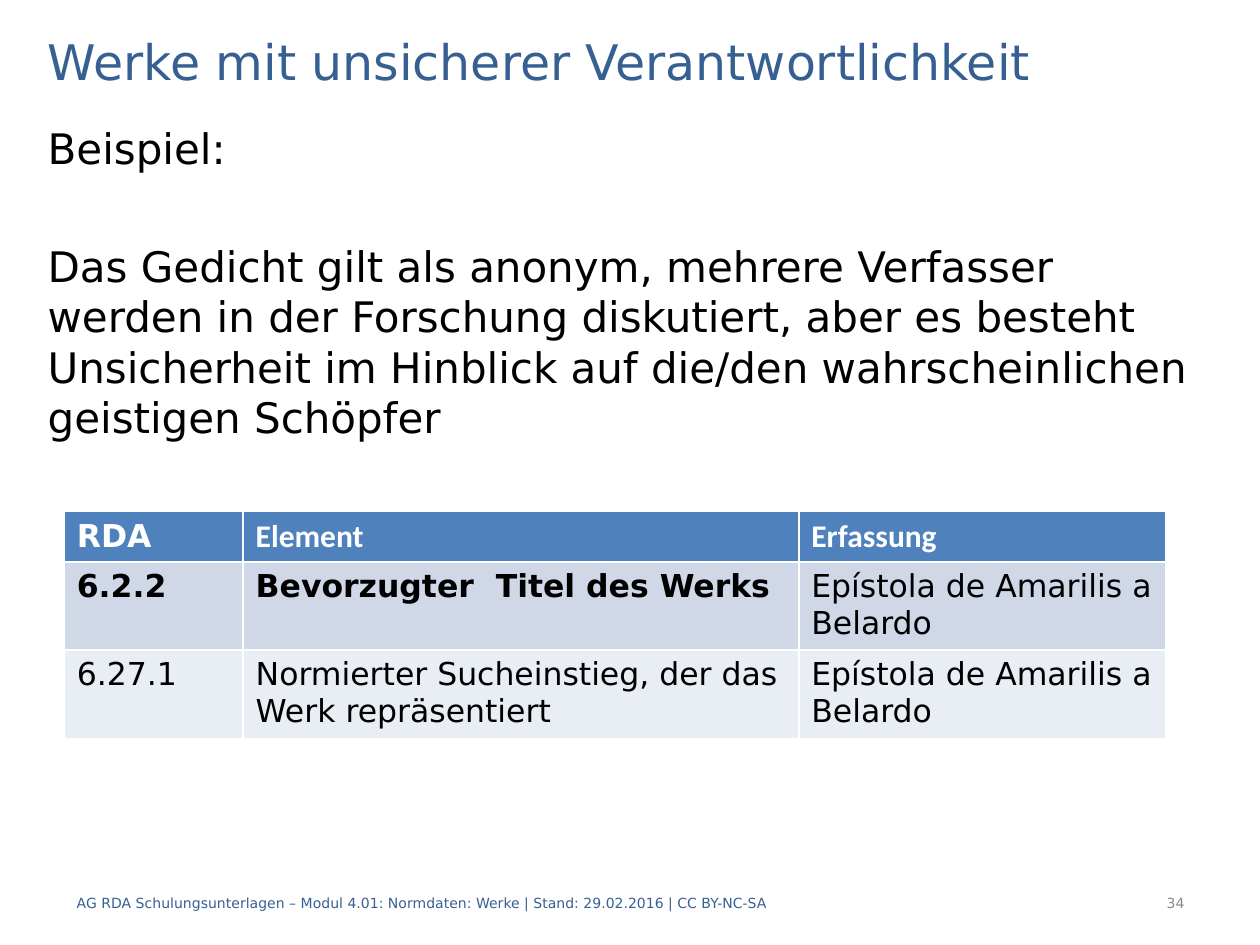
from dataclasses import dataclass

from pptx import Presentation
from pptx.dml.color import RGBColor as Rgb
from pptx.enum.text import MSO_ANCHOR as Anchor, PP_ALIGN as Align
from pptx.util import Inches, Pt


@dataclass(frozen=True)
class Theme:
    sans: str = "DejaVu Sans"
    header_sans: str = "Calibri"
    blue: str = "376092"
    black: str = "000000"
    white: str = "FFFFFF"
    grey: str = "898989"
    row_fills: tuple = ("4F81BD", "D0D8E8", "E9EDF4")
    title_size: int = 28
    body_size: int = 24
    table_size: int = 18
    footer_size: int = 8


THEME = Theme()
LEFT, WIDTH = 0.28, 9.45
INDENT = 0.51
FOOTER_TOP, FOOTER_HEIGHT = 6.97, 0.4
PARAGRAPH_GAP = 38.8
COLUMN_WIDTHS = (1.42, 4.41, 2.91)
ROW_HEIGHTS = (0.4, 0.7, 0.7)

TITLE = "Werke mit unsicherer Verantwortlichkeit"
BODY = (
    "Beispiel:",
    "Das Gedicht gilt als anonym, mehrere Verfasser werden in der Forschung "
    "diskutiert, aber es besteht Unsicherheit im Hinblick auf die/den "
    "wahrscheinlichen geistigen Schöpfer",
)
WORK_TITLE = "Epístola de Amarilis a Belardo"
ROWS = (
    ("RDA", "Element", "Erfassung"),
    ("6.2.2", "Bevorzugter  Titel des Werks", WORK_TITLE),
    ("6.27.1", "Normierter Sucheinstieg, der das Werk repräsentiert", WORK_TITLE),
)
FOOTER = ("AG RDA Schulungsunterlagen – Modul 4.01: Normdaten: Werke | "
          "Stand: 29.02.2016 | CC BY-NC-SA")
PAGE_NUMBER = "34"


def apply_format(target, values):
    for name, value in values.items():
        setattr(target, name, value)


def write(paragraph, text, size, color, family=THEME.sans, bold=False, align=Align.LEFT):
    paragraph.alignment = align
    run = paragraph.add_run()
    run.text = text
    apply_format(run.font, {"name": family, "size": Pt(size), "bold": bold})
    run.font.color.rgb = Rgb.from_string(color)


def add_title(slide):
    title = slide.shapes.title
    apply_format(title, {"left": Inches(LEFT), "top": Inches(0.2),
                         "width": Inches(WIDTH), "height": Inches(0.56)})
    apply_format(title.text_frame, {"vertical_anchor": Anchor.MIDDLE, "word_wrap": True})
    write(title.text_frame.paragraphs[0], TITLE, THEME.title_size, THEME.blue)


def add_text(slide, bounds, lines, size, color, anchor=Anchor.TOP, align=Align.LEFT):
    frame = slide.shapes.add_textbox(*map(Inches, bounds)).text_frame
    apply_format(frame, {"word_wrap": True, "vertical_anchor": anchor})
    for index, line in enumerate(lines):
        paragraph = frame.add_paragraph() if index else frame.paragraphs[0]
        paragraph.space_before = Pt(PARAGRAPH_GAP if index else 0)
        write(paragraph, line, size, color, align=align)


def add_rda_table(slide):
    table = slide.shapes.add_table(
        len(ROWS), len(COLUMN_WIDTHS), Inches(INDENT), Inches(4.06),
        Inches(sum(COLUMN_WIDTHS)), Inches(sum(ROW_HEIGHTS))).table
    for column, width in zip(table.columns, COLUMN_WIDTHS):
        column.width = Inches(width)
    for row_index, (row, height) in enumerate(zip(table.rows, ROW_HEIGHTS)):
        row.height = Inches(height)
        is_header = row_index == 0
        for column_index, cell in enumerate(row.cells):
            cell.fill.solid()
            cell.fill.fore_color.rgb = Rgb.from_string(THEME.row_fills[row_index])
            write(cell.text_frame.paragraphs[0], ROWS[row_index][column_index],
                  THEME.table_size,
                  THEME.white if is_header else THEME.black,
                  THEME.header_sans if is_header and column_index else THEME.sans,
                  is_header or (row_index == 1 and column_index < 2))


def main():
    deck = Presentation()
    apply_format(deck, {"slide_width": Inches(10), "slide_height": Inches(7.5)})
    slide = deck.slides.add_slide(deck.slide_layouts[5])
    add_title(slide)
    add_text(slide, (LEFT, 0.92, WIDTH, 5.98), BODY, THEME.body_size, THEME.black)
    add_text(slide, (INDENT, FOOTER_TOP, 6.69, FOOTER_HEIGHT), (FOOTER,),
             THEME.footer_size, THEME.blue, Anchor.MIDDLE)
    add_text(slide, (7.91, FOOTER_TOP, 1.59, FOOTER_HEIGHT), (PAGE_NUMBER,),
             THEME.footer_size, THEME.grey, Anchor.MIDDLE, Align.RIGHT)
    add_rda_table(slide)
    deck.save("out.pptx")


if __name__ == "__main__":
    main()
